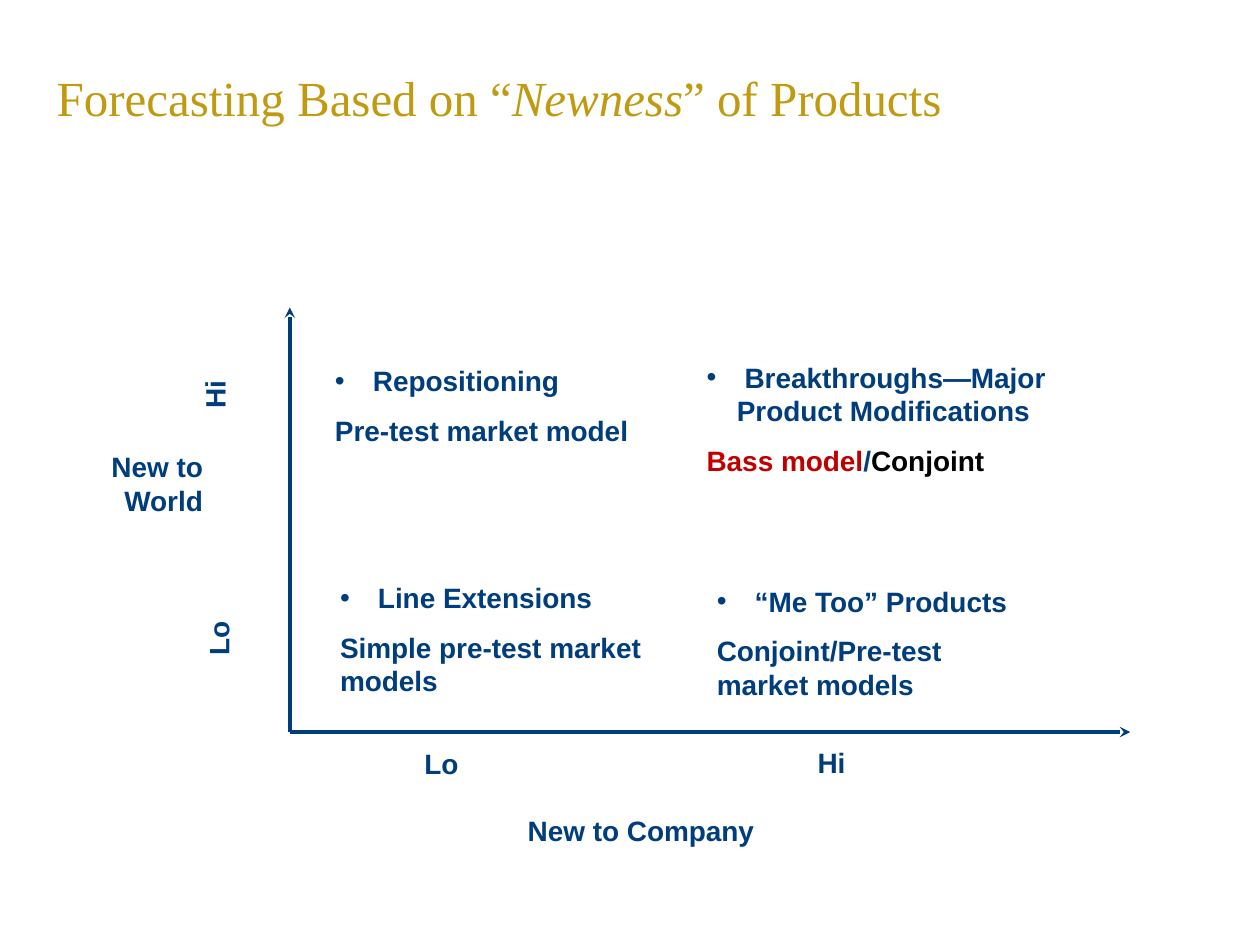
from dataclasses import dataclass

from lxml.etree import SubElement
from pptx import Presentation
from pptx.dml.color import RGBColor
from pptx.enum.shapes import MSO_CONNECTOR
from pptx.enum.text import MSO_ANCHOR, MSO_AUTO_SIZE, PP_ALIGN
from pptx.oxml.ns import qn
from pptx.util import Inches, Pt


@dataclass(frozen=True)
class Theme:
    navy: str = "003D7D"
    gold: str = "C09B12"
    red: str = "C00000"
    black: str = "000000"
    title_font: str = "Times New Roman"
    body_font: str = "Arial"
    title_size: int = 28
    body_size: int = 16
    paragraph_gap: int = 9
    axis_width: int = 2


THEME = Theme()
TITLE = {"name": THEME.title_font, "size": Pt(THEME.title_size), "bold": False}
BODY = {"name": THEME.body_font, "size": Pt(THEME.body_size), "bold": True}
FRAME = {"word_wrap": True, "auto_size": MSO_AUTO_SIZE.NONE}

# Quadrants: position and width, product type, forecasting model as (text, colour)
QUADRANTS = [
    ((2.56, 2.84, 2.82, 0.77), "Repositioning",
     [("Pre-test market model", THEME.navy)]),
    ((5.51, 2.81, 3.27, 1.04), "Breakthroughs—Major Product Modifications",
     [("Bass model", THEME.red), ("/", THEME.navy), ("Conjoint", THEME.black)]),
    ((2.6, 4.56, 2.72, 1.04), "Line Extensions",
     [("Simple pre-test market models", THEME.navy)]),
    ((5.59, 4.59, 2.72, 1.04), "“Me Too” Products",
     [("Conjoint/Pre-test market models", THEME.navy)]),
]

# Axis names and the marks along each axis
AXIS_NAMES = [
    ("New to World", (0.35, 3.52, 1.36, 0.64), PP_ALIGN.RIGHT),
    ("New to Company", (4.09, 6.41, 3.13, 0.37), PP_ALIGN.LEFT),
]
COMPANY_MARKS = [("Lo", (3.27, 5.88, 0.48, 0.37)), ("Hi", (6.39, 5.87, 0.43, 0.37))]
WORLD_MARKS = [("Lo", (1.55, 4.93, 0.47, 0.37)), ("Hi", (1.52, 3.01, 0.47, 0.33))]

ORIGIN = (2.3, 5.81)
AXIS_ENDS = [(2.3, 2.44), (8.97, 5.81)]


def apply(target, values):
    for attribute, value in values.items():
        setattr(target, attribute, value)


def add_run(paragraph, text, color, style, **extra):
    run = paragraph.add_run()
    run.text = text
    apply(run.font, {**style, **extra})
    run.font.color.rgb = RGBColor.from_string(color)


def add_bullet(paragraph, hang=0.24):
    properties = paragraph._p.get_or_add_pPr()
    properties.set("marL", str(Inches(hang)))
    properties.set("indent", str(-Inches(hang)))
    SubElement(properties, qn("a:buFont"), typeface=THEME.body_font)
    SubElement(properties, qn("a:buChar"), char="•")


def add_frame(slide, box, **values):
    frame = slide.shapes.add_textbox(*map(Inches, box)).text_frame
    apply(frame, {**FRAME, **values})
    return frame


def add_title(slide):
    title = slide.shapes.title
    apply(title, dict(zip(("left", "top", "width", "height"),
                          map(Inches, (0.35, 0.21, 7.57, 1.12)))))
    apply(title.text_frame, {**FRAME, "vertical_anchor": MSO_ANCHOR.MIDDLE})
    heading = title.text_frame.paragraphs[0]
    heading.alignment = PP_ALIGN.LEFT
    for text, italic in [("Forecasting Based on “", False), ("Newness", True),
                         ("” of Products", False)]:
        add_run(heading, text, THEME.gold, TITLE, italic=italic)


def add_axis(slide, end):
    axis = slide.shapes.add_connector(
        MSO_CONNECTOR.STRAIGHT, *map(Inches, ORIGIN + end))
    axis.line.width = Pt(THEME.axis_width)
    axis.line.color.rgb = RGBColor.from_string(THEME.navy)
    SubElement(axis.line._get_or_add_ln(), qn("a:tailEnd"), type="stealth")
    SubElement(axis._element.spPr, qn("a:effectLst"))


def add_label(slide, text, box, align=PP_ALIGN.LEFT, **values):
    frame = add_frame(slide, box, **values)
    label = frame.paragraphs[0]
    label.alignment = align
    add_run(label, text, THEME.navy, BODY)
    return frame


def add_upright_label(slide, text, box):
    # Reads from bottom to top
    frame = add_label(slide, text, box, word_wrap=False)
    frame._txBody.bodyPr.set("vert", "vert270")


def add_quadrant(slide, box, product, model):
    frame = add_frame(slide, box)
    product_line = frame.paragraphs[0]
    add_bullet(product_line)
    add_run(product_line, f" {product}", THEME.navy, BODY)
    model_line = frame.add_paragraph()
    model_line.space_before = Pt(THEME.paragraph_gap)
    for text, color in model:
        add_run(model_line, text, color, BODY)


def main():
    deck = Presentation()
    apply(deck, {"slide_width": Inches(10), "slide_height": Inches(7.5)})
    slide = deck.slides.add_slide(deck.slide_layouts.get_by_name("Title Only"))
    add_title(slide)

    # Axes and their labels
    for end in AXIS_ENDS:
        add_axis(slide, end)
    for text, box, align in AXIS_NAMES:
        add_label(slide, text, box, align)
    for text, box in COMPANY_MARKS:
        add_label(slide, text, box, word_wrap=False)
    for text, box in WORLD_MARKS:
        add_upright_label(slide, text, box)

    # Product types by newness
    for box, product, model in QUADRANTS:
        add_quadrant(slide, box, product, model)

    deck.save("out.pptx")


if __name__ == "__main__":
    main()
